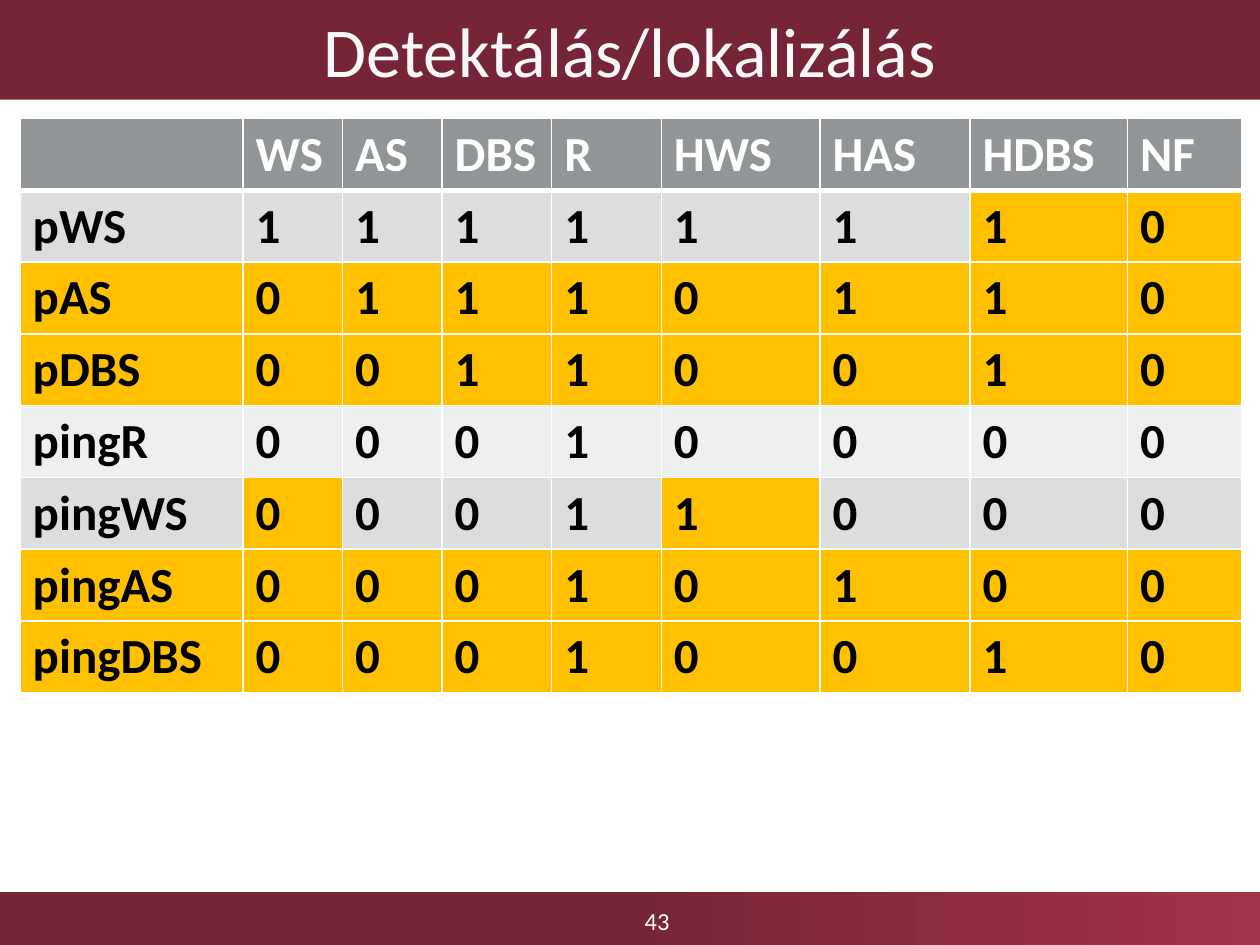
import pptx
import pptx.dml.color
import pptx.enum.shapes
import pptx.enum.text
import pptx.oxml
import pptx.oxml.ns
import pptx.util

RGBColor = pptx.dml.color.RGBColor
WINE = RGBColor(0x76, 0x25, 0x36)
ROSE = RGBColor(0xA3, 0x33, 0x4B)
OFF_WHITE = RGBColor(0xF8, 0xF8, 0xF8)
WHITE = RGBColor(0xFF, 0xFF, 0xFF)
BLACK = RGBColor(0, 0, 0)
HEADER_GRAY = RGBColor(0x92, 0x95, 0x98)
BANDS = [RGBColor(0xEE, 0xEF, 0xEF), RGBColor(0xDC, 0xDD, 0xDD)]
AMBER = RGBColor(0xFF, 0xC0, 0x00)

FAULTS = ["", "WS", "AS", "DBS", "R", "HWS", "HAS", "HDBS", "NF"]
ALL_COLUMNS = range(len(FAULTS))
# Each test: name, result for every fault, highlighted columns
TESTS = [
    ("pWS", "11111110", [7, 8]),
    ("pAS", "01110110", ALL_COLUMNS),
    ("pDBS", "00110010", ALL_COLUMNS),
    ("pingR", "00010000", []),
    ("pingWS", "00011000", [1, 5]),
    ("pingAS", "00010100", ALL_COLUMNS),
    ("pingDBS", "00010010", ALL_COLUMNS),
]
COLUMN_WIDTHS = [1.77, 0.79, 0.79, 0.87, 0.87, 1.26, 1.19, 1.25, 0.91]
ROW_HEIGHT = 0.57


def write(frame, text, **font_values):
    """Put one formatted line of text into a text frame."""
    span = frame.paragraphs[0].add_run()
    span.text = text
    for name, value in {"name": "Calibri", **font_values}.items():
        if name == "color":
            span.font.color.rgb = value
        else:
            setattr(span.font, name, value)


def add_border(cell, side, points):
    line = pptx.oxml.parse_xml(
        f'<a:{side} {pptx.oxml.ns.nsdecls("a")} w="{points * 12700}">'
        f'<a:solidFill><a:srgbClr val="{WHITE}"/></a:solidFill></a:{side}>'
    )
    cell._tc.get_or_add_tcPr().append(line)


deck = pptx.Presentation()
deck.slide_width = pptx.util.Inches(10)
deck.slide_height = pptx.util.Inches(7.5)
page = deck.slides.add_slide(deck.slide_layouts[6])

# Footer and title bands
bands = []
for top, height in [(7.08, 0.42), (0, 0.79)]:
    band = page.shapes.add_shape(
        pptx.enum.shapes.MSO_SHAPE.RECTANGLE,
        0, pptx.util.Inches(top), deck.slide_width, pptx.util.Inches(height),
    )
    band.shadow.inherit = False
    band.line.fill.background()
    bands.append(band)
footer, title = bands

footer.fill.gradient()
footer.fill.gradient_angle = 0
for stop, position, color in zip(footer.fill.gradient_stops, [0.5, 1], [WINE, ROSE]):
    stop.position = position
    stop.color.rgb = color
title.fill.solid()
title.fill.fore_color.rgb = WINE

number = page.shapes.add_textbox(
    *[pptx.util.Inches(length) for length in (3.59, 7.11, 3.25, 0.39)]
)
for box, text, size, color in [
    (title, "Detektálás/lokalizálás", 40, OFF_WHITE),
    (number, "43", 14, WHITE),
]:
    frame = box.text_frame
    frame.word_wrap = True
    frame.vertical_anchor = pptx.enum.text.MSO_ANCHOR.MIDDLE
    frame.paragraphs[0].alignment = pptx.enum.text.PP_ALIGN.CENTER
    write(frame, text, size=pptx.util.Pt(size), color=color)

# Which test detects which fault
rows = [FAULTS] + [[name, *results] for name, results, _ in TESTS]
table = page.shapes.add_table(
    len(rows), len(FAULTS),
    pptx.util.Inches(0.16), pptx.util.Inches(0.94),
    pptx.util.Inches(sum(COLUMN_WIDTHS)), pptx.util.Inches(ROW_HEIGHT * len(rows)),
).table
for column, width in zip(table.columns, COLUMN_WIDTHS):
    column.width = pptx.util.Inches(width)

for r, row in enumerate(rows):
    table.rows[r].height = pptx.util.Inches(ROW_HEIGHT)
    for c, text in enumerate(row):
        cell = table.cell(r, c)
        borders = {"lnL": 1, "lnR": 1, "lnT": 3 if r == 1 else 1, "lnB": 3 if r == 0 else 1}
        for side, points in borders.items():
            add_border(cell, side, points)
        if r == 0:
            fill = HEADER_GRAY
        else:
            fill = AMBER if c in TESTS[r - 1][2] else BANDS[r % 2]
        cell.fill.solid()
        cell.fill.fore_color.rgb = fill
        if text:
            write(
                cell.text_frame, text, size=pptx.util.Pt(28), bold=True,
                color=BLACK if r else WHITE,
            )

deck.save("out.pptx")
